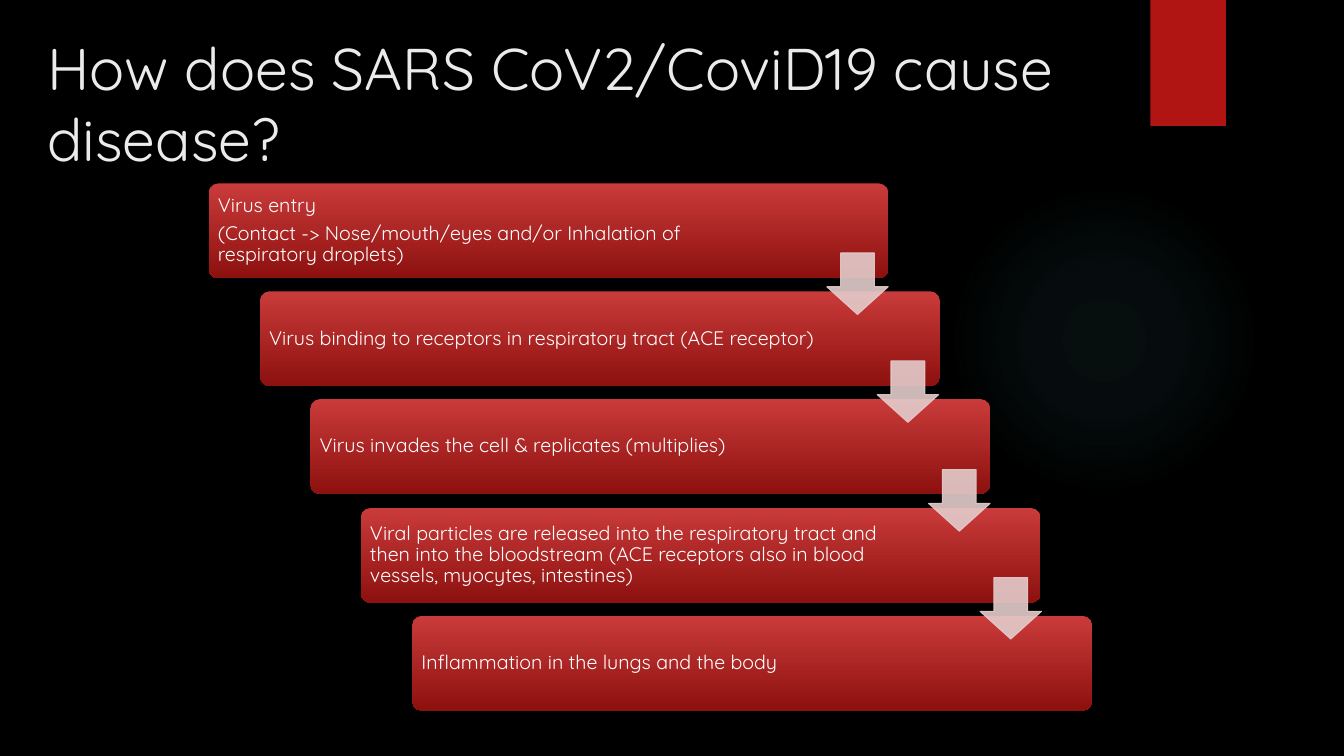
from lxml.etree import SubElement
from pptx import Presentation
from pptx.dml.color import RGBColor
from pptx.enum.shapes import MSO_SHAPE
from pptx.enum.text import MSO_ANCHOR, MSO_AUTO_SIZE, PP_ALIGN
from pptx.oxml.ns import qn
from pptx.util import Pt

EMU_PER_PX = 9144  # 100 px to the inch
SLIDE_SIZE = (1333, 750)
TITLE_ONLY = 5

CARD_SIZE = (674, 94)
FIRST_CARD = (207, 182)
CARD_STEP = (50.5, 107.25)
ARROW_SIZE = (61, 61)
FIRST_ARROW = (820, 251)
CARD_PADDING = 3
CARD_TEXT_WIDTH = 558

STAGES = [
    ["Virus entry",
     "(Contact -> Nose/mouth/eyes and/or Inhalation of respiratory droplets)"],
    ["Virus binding to receptors in respiratory tract (ACE receptor)"],
    ["Virus invades the cell & replicates (multiplies)"],
    ["Viral particles are released into the respiratory tract and then into "
     "the bloodstream (ACE receptors also in blood vessels, myocytes, "
     "intestines)"],
    ["Inflammation in the lungs and the body"],
]


def px(length):
    return round(length * EMU_PER_PX)


def rgb(hex_colour):
    return RGBColor.from_string(hex_colour)


def set_alpha(fill_properties, percent):
    """Make every solid colour inside the given XML element translucent."""
    for colour in fill_properties.iter(qn("a:srgbClr")):
        SubElement(colour, qn("a:alpha"), val=str(percent * 1000))


def write(frame, paragraphs, *, size, colour, font="Quicksand", inset=6,
          line_spacing=1.0, space_after=0):
    """Fill a text frame with paragraphs in one format, centred vertically."""
    frame.word_wrap = True
    frame.auto_size = MSO_AUTO_SIZE.NONE
    frame.vertical_anchor = MSO_ANCHOR.MIDDLE
    frame.margin_left = frame.margin_right = px(inset)
    frame.margin_top = frame.margin_bottom = px(min(inset, 6))
    frame.text = "\n".join(paragraphs)
    for paragraph in frame.paragraphs:
        paragraph.alignment = PP_ALIGN.LEFT
        paragraph.line_spacing = line_spacing
        paragraph.space_before = Pt(0)
        paragraph.space_after = Pt(space_after)
        paragraph.font.name = font
        paragraph.font.size = Pt(size)
        paragraph.font.color.rgb = rgb(colour)


class DarkSlide:
    accent = "B01513"
    card_top, card_bottom = "C93B3A", "8D110F"
    arrow_colour = "E4CCCC"
    glow_colour = "50B9C1"
    title_colour, body_colour = "EBEBEB", "FFFFFF"

    def __init__(self, presentation):
        layout = presentation.slide_layouts[TITLE_ONLY]
        self.slide = presentation.slides.add_slide(layout)
        background = self.slide.background.fill
        background.solid()
        background.fore_color.rgb = rgb("000000")

    def shape(self, kind, left, top, width, height, colour=None):
        shape = self.slide.shapes.add_shape(
            kind, px(left), px(top), px(width), px(height))
        shape.shadow.inherit = False
        shape.line.fill.background()
        if colour:
            shape.fill.solid()
            shape.fill.fore_color.rgb = rgb(colour)
        return shape

    def glow(self, left, top, diameter):
        """Add a faint circle of light that fades out towards its edge."""
        circle = self.shape(MSO_SHAPE.OVAL, left, top, diameter, diameter)
        circle.fill.gradient()
        gradient = circle.element.spPr.find(qn("a:gradFill"))
        for child in list(gradient):
            gradient.remove(child)
        stops = SubElement(gradient, qn("a:gsLst"))
        for position, alpha in ((0, 7), (36, 6), (69, 0)):
            stop = SubElement(stops, qn("a:gs"), pos=str(position * 1000))
            SubElement(stop, qn("a:srgbClr"), val=self.glow_colour)
            set_alpha(stop, alpha)
        radial = SubElement(gradient, qn("a:path"), path="circle")
        SubElement(radial, qn("a:fillToRect"),
                   l="50000", t="50000", r="50000", b="50000")

    def ribbon(self, left, top, width, height):
        self.shape(MSO_SHAPE.RECTANGLE, left, top, width, height, self.accent)

    def title(self, text, left, top, width, height):
        heading = self.slide.shapes.title
        heading.left, heading.top = px(left), px(top)
        heading.width, heading.height = px(width), px(height)
        write(heading.text_frame, [text], size=42, colour=self.title_colour,
              inset=10)

    def card(self, paragraphs, left, top):
        width, height = CARD_SIZE
        panel = self.shape(MSO_SHAPE.ROUNDED_RECTANGLE, left, top, width, height)
        panel.adjustments[0] = 0.1
        panel.fill.gradient()
        panel.fill.gradient_angle = 270
        for stop, position, colour in zip(panel.fill.gradient_stops, (0, 1),
                                          (self.card_top, self.card_bottom)):
            stop.position = position
            stop.color.rgb = rgb(colour)
        caption = self.slide.shapes.add_textbox(
            px(left + CARD_PADDING), px(top + CARD_PADDING),
            px(CARD_TEXT_WIDTH), px(height - 2 * CARD_PADDING))
        write(caption.text_frame, paragraphs, size=14, colour=self.body_colour,
              line_spacing=0.9, space_after=5)

    def arrow(self, left, top):
        arrow = self.shape(MSO_SHAPE.DOWN_ARROW, left, top, *ARROW_SIZE,
                           self.arrow_colour)
        arrow.adjustments[0] = 0.55
        arrow.adjustments[1] = 0.45
        arrow.line.color.rgb = rgb(self.arrow_colour)
        arrow.line.width = Pt(0.75)
        set_alpha(arrow.element.spPr, 90)


def staircase(first, index):
    """Return the place of the step with this index, counted from the first."""
    return [round(start + step * index) for start, step in zip(first, CARD_STEP)]


def main():
    presentation = Presentation()
    presentation.slide_width, presentation.slide_height = map(px, SLIDE_SIZE)
    page = DarkSlide(presentation)
    page.glow(941, 183, 308)
    page.ribbon(1141, 0, 75, 125)
    page.title("How does SARS CoV2/CoviD19 cause disease?", 37, 25, 1099, 153)
    for index, paragraphs in enumerate(STAGES):
        page.card(paragraphs, *staircase(FIRST_CARD, index))
    for index in range(len(STAGES) - 1):
        page.arrow(*staircase(FIRST_ARROW, index))
    presentation.save("out.pptx")


if __name__ == "__main__":
    main()
